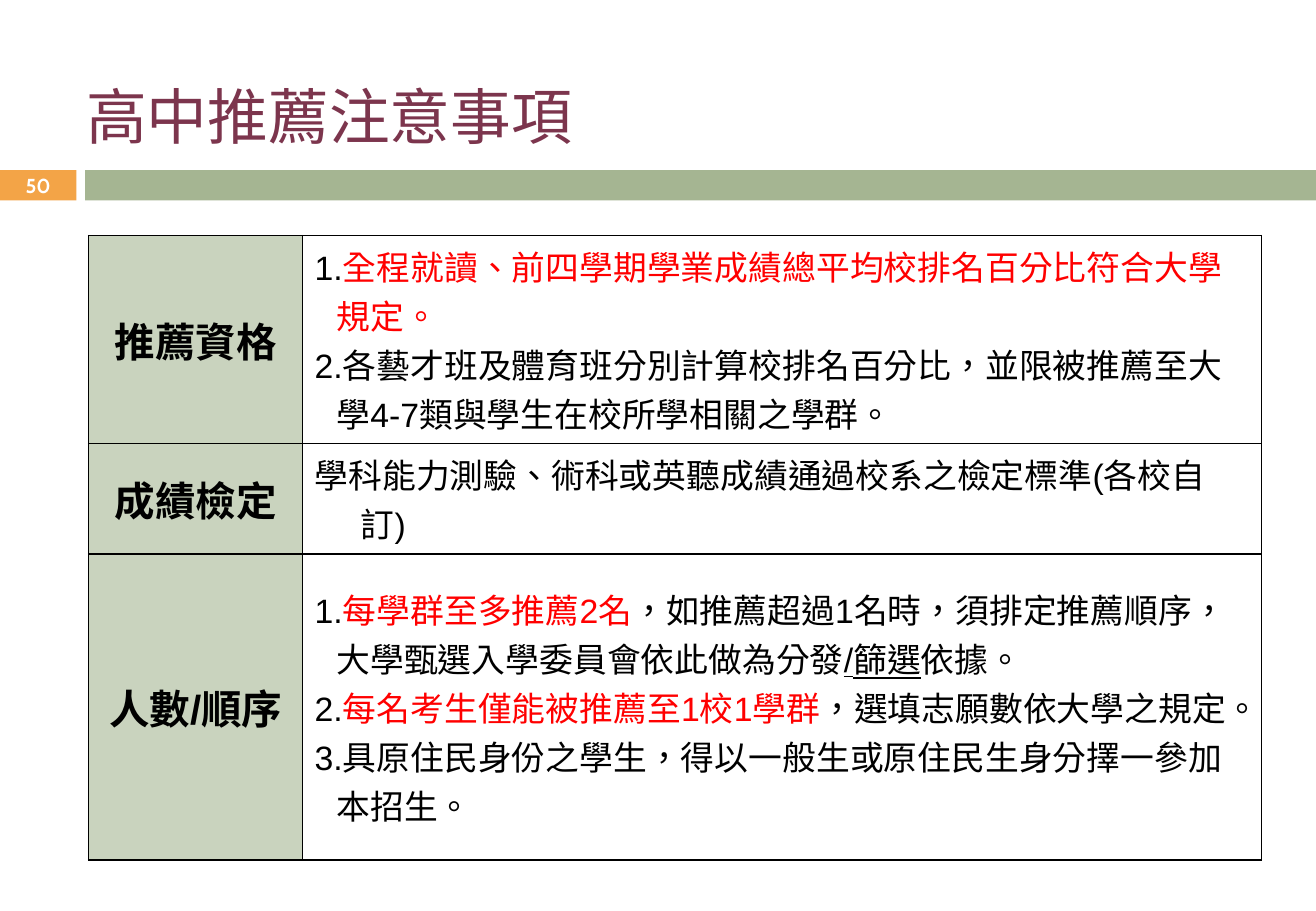
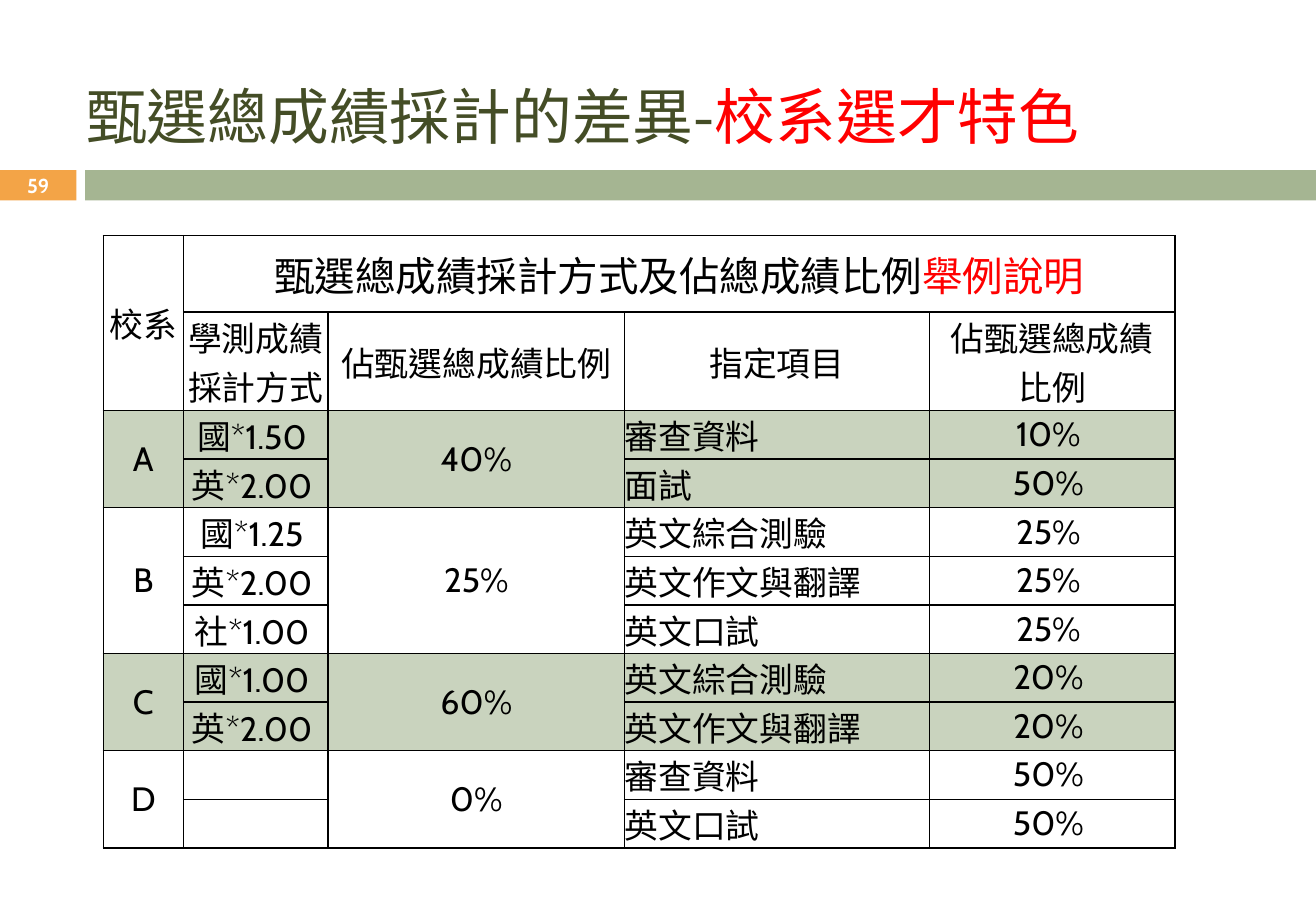
import itertools

import pptx
import pptx.dml.color
import pptx.enum.shapes
import pptx.enum.text
import pptx.oxml.ns
import pptx.util
import lxml.etree

Inches = pptx.util.Inches
Pt = pptx.util.Pt
ALIGN = pptx.enum.text.PP_ALIGN
MIDDLE = pptx.enum.text.MSO_ANCHOR.MIDDLE

ORANGE, GREEN, PALE_GREEN = "F3A447", "A5B592", "C9D3BE"
PLUM, OLIVE, RED, BLACK, WHITE = "7C354D", "444D26", "FF0000", "000000", "FFFFFF"
CJK_FONT, NUMBER_FONT, TABLE_FONT = "Noto Sans CJK SC", "Cabin", "Arial"


def rgb(color):
    return pptx.dml.color.RGBColor.from_string(color)


def add_child(parent, tag, **attributes):
    return lxml.etree.SubElement(parent, pptx.oxml.ns.qn(tag), attributes)


def write(frame, paragraphs, holder=None, size=20, font=CJK_FONT, color=BLACK,
          bold=False, align=ALIGN.LEFT, hangs=(0,), margins=(0.1, 0.05)):
    holder = holder or frame
    holder.vertical_anchor = MIDDLE
    holder.margin_left = holder.margin_right = Inches(margins[0])
    holder.margin_top = holder.margin_bottom = Inches(margins[1])
    for index, (spans, hang) in enumerate(zip(paragraphs, itertools.cycle(hangs))):
        para = frame.paragraphs[0] if index == 0 else frame.add_paragraph()
        para.alignment = align
        if hang:
            properties = para._p.get_or_add_pPr()
            properties.set("marL", str(Inches(hang)))
            properties.set("indent", str(-Inches(hang)))
        for text, changes in spans:
            span = para.add_run()
            span.text = text
            span.font.size = Pt(size)
            span.font.name = font
            span.font.bold = bold
            span.font.underline = changes.get("underline", False)
            span.font.color.rgb = rgb(changes.get("color", color))
            properties = span._r.get_or_add_rPr()
            properties.set("lang", "zh-TW")
            add_child(properties, "a:ea", typeface=CJK_FONT)


def plain(*lines):
    return [[(line, {})] for line in lines]


def red(text):
    return text, {"color": RED}


def add_text(page, place, paragraphs, **style):
    box = page.shapes.add_textbox(*map(Inches, place))
    box.text_frame.word_wrap = True
    write(box.text_frame, paragraphs, **style)


def add_band(page, place, color):
    band = page.shapes.add_shape(
        pptx.enum.shapes.MSO_SHAPE.RECTANGLE, *map(Inches, place))
    band.shadow.inherit = False
    band.fill.solid()
    band.fill.fore_color.rgb = rgb(color)
    band.line.fill.background()


def add_page(deck, number, title, color):
    page = deck.slides.add_slide(deck.slide_layouts[6])
    add_band(page, (0, 1.4, 0.63, 0.25), ORANGE)
    add_band(page, (0.7, 1.4, 10.13, 0.25), GREEN)
    add_text(page, (0.61, 0.55, 10.22, 0.79), [title], size=36, color=color)
    add_text(page, (0, 1.39, 0.63, 0.27), plain(number), size=12,
             font=NUMBER_FONT, color=WHITE, bold=True, align=ALIGN.CENTER,
             margins=(0, 0))
    return page


def add_grid(page, left, top, widths, heights):
    grid = page.shapes.add_table(
        len(heights), len(widths), Inches(left), Inches(top),
        Inches(sum(widths)), Inches(sum(heights))).table
    grid.first_row = grid.horz_banding = False
    for column, width in zip(grid.columns, widths):
        column.width = Inches(width)
    for row, height in zip(grid.rows, heights):
        row.height = Inches(height)
    for cell in grid.iter_cells():
        properties = cell._tc.get_or_add_tcPr()
        for side in ("a:lnL", "a:lnR", "a:lnT", "a:lnB"):
            border = add_child(properties, side, w=str(Pt(1)))
            add_child(add_child(border, "a:solidFill"), "a:srgbClr", val=BLACK)
        paint(cell, WHITE)
    return grid


def paint(cell, color):
    cell.fill.solid()
    cell.fill.fore_color.rgb = rgb(color)


def write_cell(cell, paragraphs, **style):
    write(cell.text_frame, paragraphs, holder=cell, **style)


def add_recommendation_page(deck):
    page = add_page(deck, "50", [("高中推薦注意事項", {})], PLUM)
    grid = add_grid(page, 0.73, 1.94, (1.76, 7.89), (1.71, 0.91, 2.52))
    rules = [
        ("推薦資格", (0.18,),
         [[("1.", {}), red("全程就讀、前四學期學業成績總平均校排名百分比符合大學規定。")],
          [("2.各藝才班及體育班分別計算校排名百分比，並限被推薦至大"
            "學4-7類與學生在校所學相關之學群。", {})]]),
        ("成績檢定", (0.38,),
         plain("學科能力測驗、術科或英聽成績通過校系之檢定標準(各校自訂)")),
        ("人數/順序", (0.18, 0, 0.18),
         [[("1.", {}), red("每學群至多推薦2名"),
           ("，如推薦超過1名時，須排定推薦順序，大學甄選入學委員會依此做為分發", {}),
           ("/篩選", {"underline": True}), ("依據。", {})],
          [("2.", {}), red("每名考生僅能被推薦至1校1學群"),
           ("，選填志願數依大學之規定。", {})],
          [("3.具原住民身份之學生，得以一般生或原住民生身分擇一參加本招生。", {})]]),
    ]
    for row, (heading, hangs, paragraphs) in enumerate(rules):
        paint(grid.cell(row, 0), PALE_GREEN)
        write_cell(grid.cell(row, 0), plain(heading), size=24, font=TABLE_FONT,
                   bold=True, align=ALIGN.CENTER, hangs=(0.38,))
        write_cell(grid.cell(row, 1), paragraphs, font=TABLE_FONT, hangs=hangs)


def add_scoring_page(deck):
    page = add_page(deck, "59", [("甄選總成績採計的差異-", {}), red("校系選才特色")], OLIVE)
    grid = add_grid(page, 0.85, 1.94, (0.66, 1.19, 2.44, 2.51, 2.02),
                    [0.63, 0.81] + [0.4] * 9)
    style = {"font": NUMBER_FONT, "align": ALIGN.CENTER, "margins": (0, 0)}
    grid.cell(0, 0).merge(grid.cell(1, 0))
    grid.cell(0, 1).merge(grid.cell(0, 4))
    write_cell(grid.cell(0, 0), plain("校系"), **style)
    write_cell(grid.cell(0, 1),
               [[("甄選總成績採計方式及佔總成績比例", {}), red("舉例說明")]], size=24, **style)
    headings = [("學測成績", "採計方式"), ("佔甄選總成績比例",), ("指定項目",),
                ("佔甄選總成績", "比例")]
    for column, lines in enumerate(headings, 1):
        write_cell(grid.cell(1, column), plain(*lines), **style)

    departments = [
        ("A", "40%", [("國*1.50", "審查資料", "10%"), ("英*2.00", "面試", "50%")]),
        ("B", "25%", [("國*1.25", "英文綜合測驗", "25%"),
                      ("英*2.00", "英文作文與翻譯", "25%"),
                      ("社*1.00", "英文口試", "25%")]),
        ("C", "60%", [("國*1.00", "英文綜合測驗", "20%"),
                      ("英*2.00", "英文作文與翻譯", "20%")]),
        ("D", "0%", [("", "審查資料", "50%"), ("", "英文口試", "50%")]),
    ]
    top = 2
    for index, (name, share, items) in enumerate(departments):
        for row, (subject, task, weight) in enumerate(items, top):
            for column in range(5):
                paint(grid.cell(row, column), WHITE if index % 2 else PALE_GREEN)
            write_cell(grid.cell(row, 1),
                       plain(f"{subject} ") if subject else [], **style)
            write_cell(grid.cell(row, 3), plain(task),
                       **{**style, "align": ALIGN.LEFT})
            write_cell(grid.cell(row, 4), plain(f"{weight} "), **style)
        for column, text in ((0, name), (2, share)):
            grid.cell(top, column).merge(grid.cell(top + len(items) - 1, column))
            write_cell(grid.cell(top, column), plain(text), **style)
        top += len(items)


def main():
    deck = pptx.Presentation()
    deck.slide_width = Inches(10.83)
    deck.slide_height = Inches(7.5)
    add_recommendation_page(deck)
    add_scoring_page(deck)
    deck.save("out.pptx")


if __name__ == "__main__":
    main()
